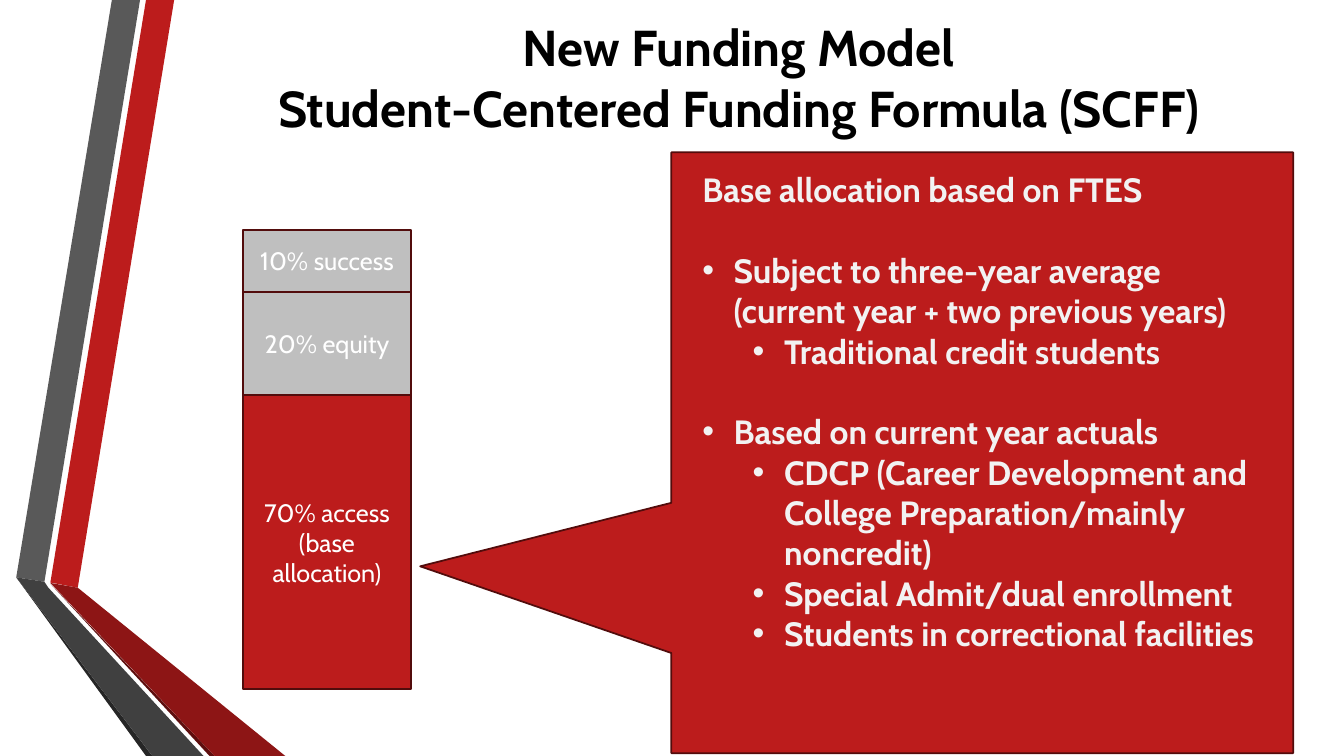
from lxml import etree
from pptx import Presentation
from pptx.dml.color import RGBColor
from pptx.enum.shapes import MSO_SHAPE
from pptx.enum.text import MSO_ANCHOR, PP_ALIGN
from pptx.oxml.ns import qn
from pptx.util import Cm, Pt

RECTANGLE = MSO_SHAPE.RECTANGLE
CALLOUT = MSO_SHAPE.RECTANGULAR_CALLOUT
TOP, MIDDLE = MSO_ANCHOR.TOP, MSO_ANCHOR.MIDDLE
LEFT, CENTER = PP_ALIGN.LEFT, PP_ALIGN.CENTER

WIDTH, HEIGHT = 33.87, 19.05
RED, GRAY, WHITE, BLACK = "BC1C1C", "BFBFBF", "FFFFFF", "000000"
OUTLINE, PALE = "520C0C", "F2F2F2"

RIBBONS = [
    (RED, [(1.27, 14.68), (1.96, 14.81), (4.39, 0), (3.68, 0)]),
    ("595959", [(3.53, 0), (2.82, 0), (0.41, 14.55), (1.12, 14.66)]),
    ("262626", [(0.41, 14.55), (3.68, HEIGHT), (3.84, HEIGHT)]),
    ("5E0E0E", [(1.27, 14.71), (5.28, HEIGHT), (5.41, HEIGHT)]),
    ("8D1515", [(1.27, 14.69), (5.41, HEIGHT), (7.19, HEIGHT), (1.96, 14.81)]),
    ("404040", [(5.13, HEIGHT), (1.22, 14.81), (1.12, 14.66), (0.41, 14.55), (3.84, HEIGHT)]),
]

SHARES = [
    ("10% success", 1.57, GRAY),
    ("20% equity", 2.6, GRAY),
    ("70% access (base allocation)", 7.41, RED),
]

DETAILS = [
    (None, "Base allocation based on FTES"),
    (0, "Subject to three-year average (current year + two previous years)"),
    (1, "Traditional credit students"),
    (0, "Based on current year actuals"),
    (1, "CDCP (Career Development and College Preparation/mainly noncredit)"),
    (1, "Special Admit/dual enrollment"),
    (1, "Students in correctional facilities"),
]


def color(value):
    return RGBColor.from_string(value)


class FundingSlide:
    font = "Cabin"
    line_width = Pt(1.25)
    hanging = 0.79
    level_step = 1.27

    def __init__(self, page):
        self.page = page

    def paint(self, shape, fill, line=None):
        shape.shadow.inherit = False
        shape.fill.solid()
        shape.fill.fore_color.rgb = color(fill)
        if line:
            shape.line.color.rgb = color(line)
            shape.line.width = self.line_width
        else:
            shape.line.fill.background()

    def ribbon(self, points, fill):
        start, *rest = [(Cm(x), Cm(y)) for x, y in points]
        builder = self.page.shapes.build_freeform(*start)
        builder.add_line_segments(rest)
        self.paint(builder.convert_to_shape(), fill)

    def block(self, kind, area, fill):
        shape = self.page.shapes.add_shape(kind, *map(Cm, area))
        self.paint(shape, fill, OUTLINE)
        return shape

    def textbox(self, area):
        return self.page.shapes.add_textbox(*map(Cm, area))

    def frame(self, shape, anchor):
        frame = shape.text_frame
        frame.word_wrap = True
        frame.vertical_anchor = anchor
        return frame

    def set_text(self, para, text, size, ink, bold=False, align=CENTER):
        para.text = text
        para.alignment = align
        para.font.name = self.font
        para.font.size = Pt(size)
        para.font.bold = bold
        para.font.color.rgb = color(ink)

    def label(self, shape, text, size, ink, bold=False):
        frame = self.frame(shape, MIDDLE)
        self.set_text(frame.paragraphs[0], text, size, ink, bold)

    def bullet(self, para, level):
        para.level = level
        properties = para._p.get_or_add_pPr()
        properties.set("marL", str(Cm(self.hanging + level * self.level_step)))
        properties.set("indent", str(-Cm(self.hanging)))
        etree.SubElement(properties, qn("a:buFont")).set("typeface", "Arial")
        etree.SubElement(properties, qn("a:buChar")).set("char", "•")

    def outline(self, area, items, size, ink):
        frame = self.frame(self.textbox(area), TOP)
        for index, (level, text) in enumerate(items):
            para = frame.add_paragraph() if index else frame.paragraphs[0]
            if level is not None:
                self.bullet(para, level)
            if level == 0:
                para.space_before = Pt(size * 1.2)
            self.set_text(para, text, size, ink, True, LEFT)


def main():
    deck = Presentation()
    deck.slide_width, deck.slide_height = Cm(WIDTH), Cm(HEIGHT)
    slide = FundingSlide(deck.slides.add_slide(deck.slide_layouts[6]))

    for fill, points in RIBBONS:
        slide.ribbon(points, fill)

    callout = slide.block(CALLOUT, (16.92, 3.84, 15.67, 15.14), RED)
    callout.adjustments[0] = -0.904
    callout.adjustments[1] = 0.189

    title = slide.textbox((5.92, 0.64, 25.4, 2.59))
    slide.label(title, "New Funding Model\vStudent-Centered Funding Formula (SCFF)", 36, BLACK, True)

    top = 5.79
    for text, height, fill in SHARES:
        share = slide.block(RECTANGLE, (6.12, top, 4.24, height), fill)
        slide.label(share, text, 18, WHITE)
        top += height

    slide.outline((17.45, 4.14, 14.4, 14.63), DETAILS, 24, PALE)
    deck.save("out.pptx")


if __name__ == "__main__":
    main()
